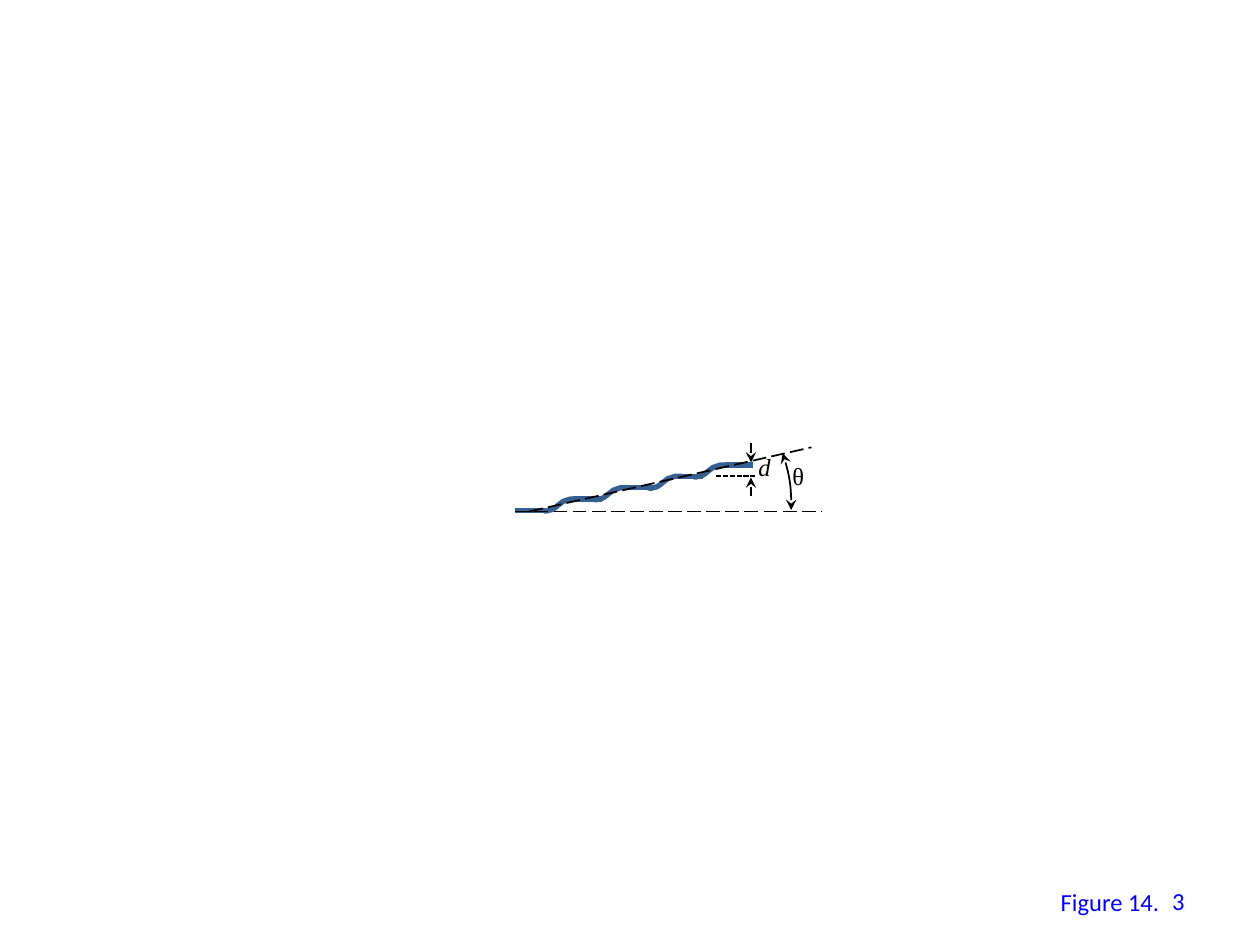
"""Build the slide with a stepped surface, its mean slope angle and step height."""
from pptx import Presentation
from pptx.dml.color import RGBColor
from pptx.enum.dml import MSO_LINE
from pptx.enum.shapes import MSO_CONNECTOR, MSO_SHAPE
from pptx.enum.text import MSO_ANCHOR, MSO_AUTO_SIZE, PP_ALIGN
from pptx.oxml.ns import qn
from pptx.util import Inches, Pt
from lxml.etree import SubElement

BLACK = RGBColor(0x00, 0x00, 0x00)
STEEL = RGBColor(0x37, 0x60, 0x92)
BLUE = RGBColor(0x00, 0x00, 0xFF)

deck = Presentation()
deck.slide_width, deck.slide_height = Inches(10), Inches(7.5)
slide = deck.slides.add_slide(deck.slide_layouts[6])
shapes = slide.shapes


def add_line(x1, y1, x2, y2, color=BLACK, width=1, dash=None, arrow=False):
    line = shapes.add_connector(MSO_CONNECTOR.STRAIGHT, Inches(x1), Inches(y1),
                                Inches(x2), Inches(y2))
    line.line.color.rgb = color
    line.line.width = Pt(width)
    if dash:
        line.line.dash_style = dash
    if arrow:
        SubElement(line.line._get_or_add_ln(), qn("a:tailEnd"), type="stealth")
    SubElement(line._element.spPr, qn("a:effectLst"))


def add_label(text, x, y, w, h, font, color, italic=False, wrap=False):
    box = shapes.add_textbox(Inches(x), Inches(y), Inches(w), Inches(h))
    frame = box.text_frame
    frame.text = text
    frame.word_wrap = wrap
    if not wrap:
        frame.auto_size = MSO_AUTO_SIZE.SHAPE_TO_FIT_TEXT
    style = frame.paragraphs[0].runs[0].font
    style.name, style.size, style.italic = font, Pt(14), italic
    style.color.rgb = color
    return frame


add_label("Figure 14.", 8.32, 6.99, 0.99, 0.34, "Calibri", BLUE)

BASE, RISE = 4.05, 0.09
for step, left in enumerate([4.09, 4.55, 4.95, 5.35, 5.75]):
    level = BASE - step * RISE
    add_line(left, level, left + 0.23, level, STEEL, 3)

CURVE = [(1, 1), (3, 1), (5, 0), (7, 0), (10, -2), (12, -4),
         (13, -5), (15, -6), (16, -7), (17, -8), (18, -8), (19, -8),
         (20, -8), (21, -8), (22, -9), (23, -9), (24, -9), (25, -9),
         (25, -9), (26, -9), (27, -9)]
for step, left in enumerate([4.31, 4.71, 5.14, 5.5]):
    pen = shapes.build_freeform(0, 0, scale=Inches(0.01))
    pen.add_line_segments(CURVE, close=False)
    ramp = pen.convert_to_shape(Inches(left), Inches(BASE - step * RISE))
    track = next(ramp._element.iter(qn("a:path")))
    parts = track.findall(qn("a:lnTo"))
    for first in range(0, len(parts), 3):
        bend = SubElement(track, qn("a:cubicBezTo"))
        for part in parts[first:first + 3]:
            bend.append(part[0])
            track.remove(part)
    ramp.fill.background()
    ramp.line.color.rgb = STEEL
    ramp.line.width = Pt(3)
    ramp.shadow.inherit = False

add_line(4.2, 4.06, 6.44, 3.55, dash=MSO_LINE.LONG_DASH)
add_line(4.09, 4.06, 6.52, 4.06, dash=MSO_LINE.LONG_DASH)
add_line(5.68, 3.78, 5.99, 3.78, dash=MSO_LINE.SQUARE_DOT)
for start, end in [(3.94, 3.79), (3.52, 3.67)]:
    add_line(5.96, start, 5.96, end, arrow=True)
add_label("d", 5.92, 3.54, 0.35, 0.34, "Times New Roman", BLACK, italic=True)

arc = shapes.add_shape(MSO_SHAPE.ARC, Inches(3.77), Inches(2.75),
                       Inches(2.51), Inches(2.51))
arc.adjustments[0], arc.adjustments[1] = 204.626, 1.155
arc.fill.background()
arc.line.color.rgb = BLACK
arc.line.width = Pt(1)
arc.shadow.inherit = False
for end in ("a:headEnd", "a:tailEnd"):
    SubElement(arc.line._get_or_add_ln(), qn(end), type="stealth")
add_label("θ", 6.19, 3.61, 0.31, 0.34, "Times New Roman", BLACK)

page = add_label("3", 7.17, 6.95, 2.33, 0.4, "Calibri", BLUE, wrap=True)
page.vertical_anchor = MSO_ANCHOR.MIDDLE
page.paragraphs[0].alignment = PP_ALIGN.RIGHT

deck.save("out.pptx")
